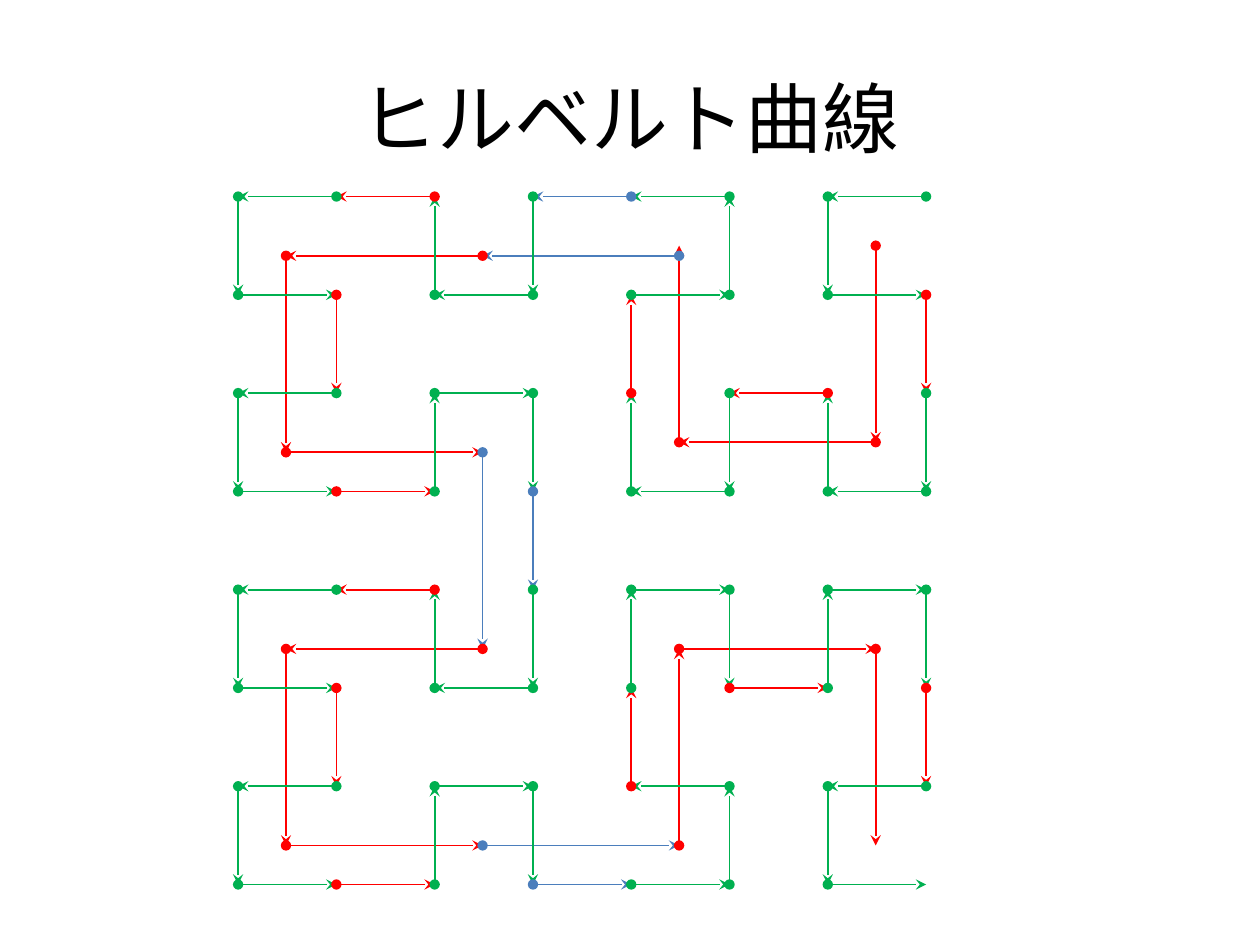
import pptx
import pptx.util
import pptx.dml.color
import pptx.enum.shapes
import pptx.enum.text
import pptx.oxml.ns
import lxml.etree

Inches = pptx.util.Inches
GREEN = pptx.dml.color.RGBColor(0x00, 0xB0, 0x50)
RED = pptx.dml.color.RGBColor(0xFF, 0x00, 0x00)
BLUE = pptx.dml.color.RGBColor(0x4B, 0x7E, 0xBC)
BLACK = pptx.dml.color.RGBColor(0x00, 0x00, 0x00)

TITLE = "ヒルベルト曲線"
LEFT, DOWN = (-1, 0), (0, 1)
COARSE = {"order": 2, "start": (6.95, 2.03), "pitch": 1.56,
          "colors": ((4, BLUE), (1, RED)), "raised_steps": 3}
FINE = {"order": 3, "start": (7.35, 1.56), "pitch": 0.78,
        "colors": ((16, BLUE), (4, RED), (1, GREEN)), "raised_steps": 0}
RAISE = 0.08


def reverse(direction):
    return -direction[0], -direction[1]


def hilbert_steps(order, first, second):
    if order == 0:
        return []
    middle = hilbert_steps(order - 1, first, second)
    return (hilbert_steps(order - 1, second, first) + [first]
            + middle + [second] + middle + [reverse(first)]
            + hilbert_steps(order - 1, reverse(second), reverse(first)))


def add_arrow(slide, begin, end, color):
    arrow = slide.shapes.add_connector(
        pptx.enum.shapes.MSO_CONNECTOR.STRAIGHT,
        *(Inches(value) for value in begin + end))
    arrow.line.color.rgb = color
    arrow.line.width = pptx.util.Pt(1)
    outline = arrow.line._get_or_add_ln()
    for tag, style in (("a:headEnd", "oval"), ("a:tailEnd", "stealth")):
        marker = lxml.etree.SubElement(outline, pptx.oxml.ns.qn(tag))
        marker.set("type", style)
    properties = arrow._element.spPr
    lxml.etree.SubElement(properties, pptx.oxml.ns.qn("a:effectLst"))


def add_curve(slide, curve, first, second):
    x, y = curve["start"]
    pitch = curve["pitch"]
    steps = hilbert_steps(curve["order"], first, second)
    for number, (dx, dy) in enumerate(steps, 1):
        color = next(color for period, color in curve["colors"]
                     if number % period == 0)
        lift = RAISE if number <= curve["raised_steps"] else 0
        next_x, next_y = x + dx * pitch, y + dy * pitch
        add_arrow(slide, (x, y - lift), (next_x, next_y - lift), color)
        x, y = next_x, next_y


def add_title(slide):
    title = slide.shapes.title
    title.left, title.top = Inches(0.5), Inches(0.3)
    title.width, title.height = Inches(9), Inches(1.25)
    title.text_frame.vertical_anchor = pptx.enum.text.MSO_ANCHOR.MIDDLE
    paragraph = title.text_frame.paragraphs[0]
    paragraph.alignment = pptx.enum.text.PP_ALIGN.CENTER
    run = paragraph.add_run()
    run.text = TITLE
    run.font.name = "Calibri"
    run.font.size = pptx.util.Pt(44)
    run.font.color.rgb = BLACK


def main():
    presentation = pptx.Presentation()
    presentation.slide_width = Inches(10)
    presentation.slide_height = Inches(7.5)
    slide = presentation.slides.add_slide(presentation.slide_layouts[5])
    add_title(slide)
    for curve in (COARSE, FINE):
        add_curve(slide, curve, LEFT, DOWN)
    presentation.save("out.pptx")


if __name__ == "__main__":
    main()
